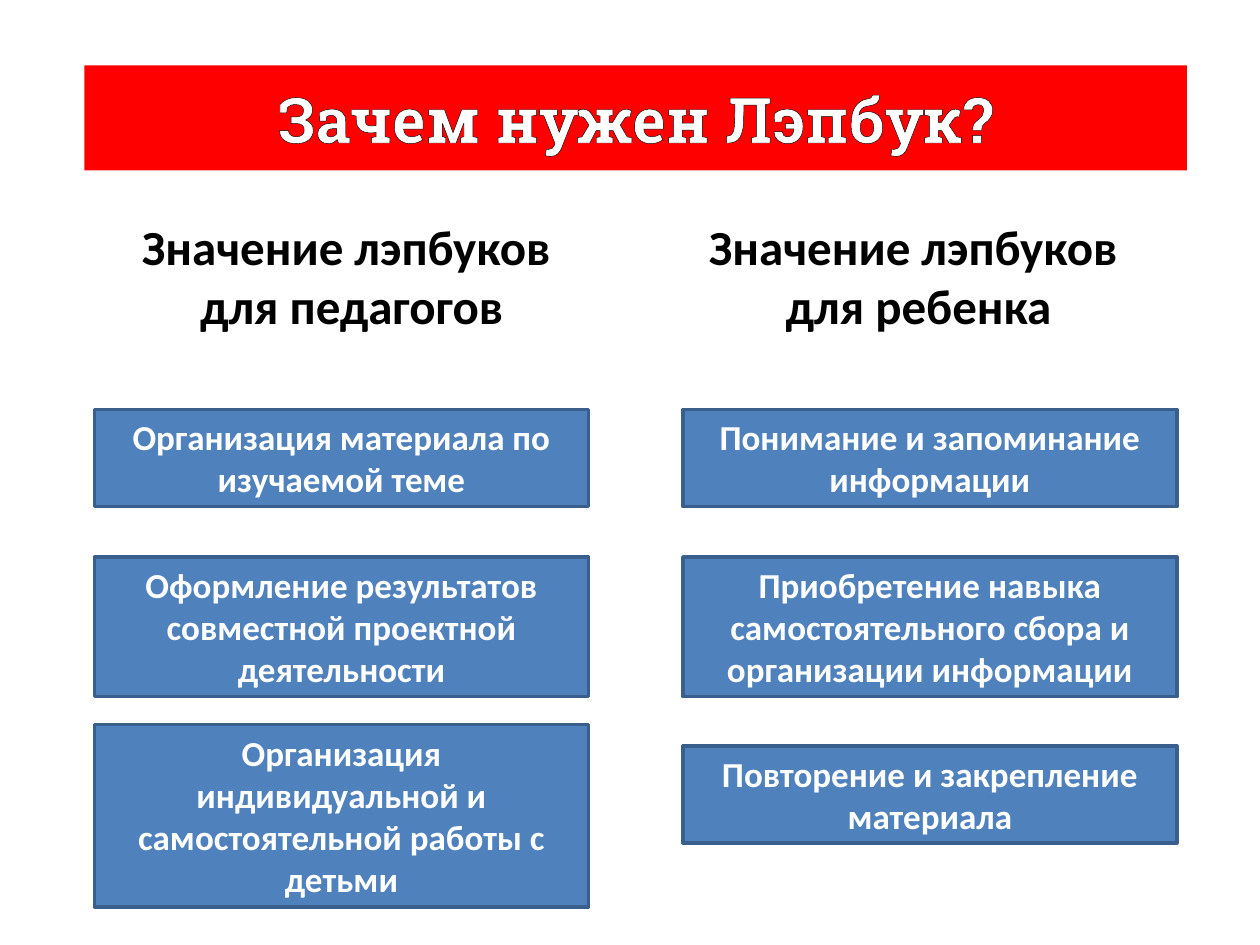
from lxml import etree
from pptx import Presentation
from pptx.dml.color import RGBColor
from pptx.enum.shapes import MSO_SHAPE
from pptx.enum.text import MSO_ANCHOR, MSO_AUTO_SIZE, PP_ALIGN
from pptx.oxml.ns import qn
from pptx.util import Inches, Pt

RECTANGLE = MSO_SHAPE.RECTANGLE
CENTER = PP_ALIGN.CENTER
TOP, MIDDLE = MSO_ANCHOR.TOP, MSO_ANCHOR.MIDDLE
GROW = MSO_AUTO_SIZE.SHAPE_TO_FIT_TEXT

COLORS = {
    "banner": "FF0000",
    "card": "4F81BD",
    "card_line": "3A5F8C",
    "light": "FFFFFF",
    "dark": "000000",
}
TITLE_FONT = {"name": "Roboto Slab", "size": Pt(36), "bold": True}
HEADING_FONT = {"name": "Calibri", "size": Pt(28), "bold": True}
CARD_FONT = {"name": "Calibri", "size": Pt(20), "bold": True}

COLUMN_WIDTH = 3.92
# Each column: heading left, heading lines, card left, cards as (top, height, text)
COLUMNS = [
    (0.83, ["Значение лэпбуков ", "для педагогов"], 0.75, [
        (3.25, 0.77, "Организация материала по изучаемой теме"),
        (4.42, 1.11, "Оформление результатов совместной проектной деятельности"),
        (5.75, 1.45, "Организация индивидуальной и самостоятельной работы с детьми"),
    ]),
    (5.33, ["Значение лэпбуков ", "для ребенка"], 5.42, [
        (3.25, 0.77, "Понимание и запоминание информации"),
        (4.42, 1.11, "Приобретение навыка самостоятельного сбора и организации информации"),
        (5.92, 0.77, "Повторение и закрепление материала"),
    ]),
]


def color(name):
    return RGBColor.from_string(COLORS[name])


def write_text(shape, lines, font_values, color_name, anchor):
    """Fill the shape with centred paragraphs, one for each line."""
    frame = shape.text_frame
    frame.text = "\n".join(lines)
    frame.word_wrap = True
    frame.auto_size = GROW
    frame.vertical_anchor = anchor
    for para in frame.paragraphs:
        para.alignment = CENTER
        for span in para.runs:
            for key, value in font_values.items():
                setattr(span.font, key, value)
            span.font.color.rgb = color(color_name)


deck = Presentation()
deck.slide_width, deck.slide_height = Inches(10), Inches(7.5)
page = deck.slides.add_slide(deck.slide_layouts[5])

title = page.shapes.title
title.left, title.top = Inches(0.67), Inches(0.58)
title.width, title.height = Inches(8.75), Inches(0.71)
title.fill.solid()
title.fill.fore_color.rgb = color("banner")
write_text(title, ["Зачем нужен Лэпбук?"], TITLE_FONT, "light", MIDDLE)

# The letters of the title have a thin dark outline
text_format = title.text_frame.paragraphs[0].runs[0].font._element
outline = etree.Element(qn("a:ln"), w=str(Pt(0.75)))
outline_fill = etree.SubElement(outline, qn("a:solidFill"))
etree.SubElement(outline_fill, qn("a:srgbClr"), val=COLORS["dark"])
text_format.insert(0, outline)

for heading_left, heading_lines, card_left, cards in COLUMNS:
    heading = page.shapes.add_textbox(
        Inches(heading_left), Inches(1.67), Inches(COLUMN_WIDTH), Inches(1.04))
    write_text(heading, heading_lines, HEADING_FONT, "dark", TOP)

    for top, height, text in cards:
        card = page.shapes.add_shape(
            RECTANGLE, Inches(card_left), Inches(top), Inches(COLUMN_WIDTH), Inches(height))
        card.shadow.inherit = False
        card.fill.solid()
        card.fill.fore_color.rgb = color("card")
        card.line.color.rgb = color("card_line")
        card.line.width = Pt(2)
        write_text(card, [text], CARD_FONT, "light", MIDDLE)

deck.save("out.pptx")
